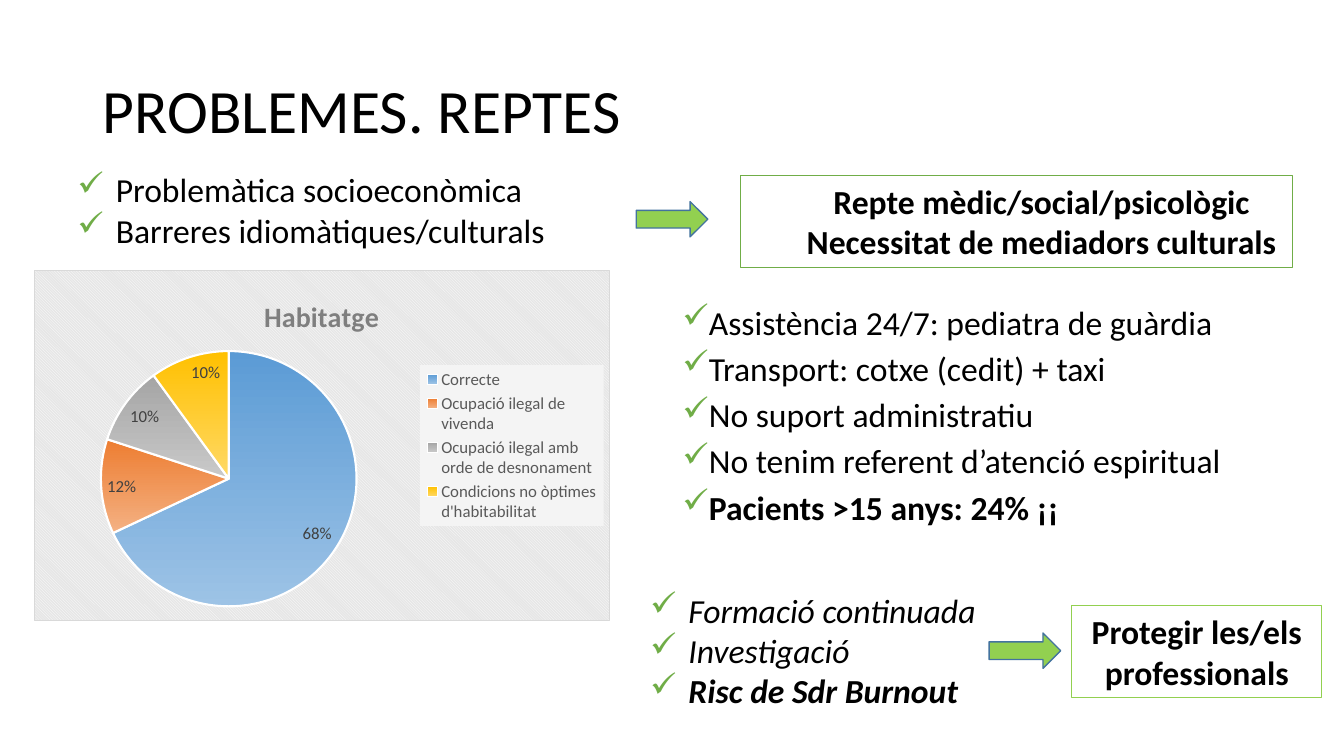
from lxml.etree import SubElement
from pptx import Presentation
from pptx.chart.data import CategoryChartData
from pptx.dml.color import RGBColor
from pptx.enum.chart import XL_CHART_TYPE, XL_LABEL_POSITION, XL_LEGEND_POSITION
from pptx.enum.shapes import MSO_SHAPE
from pptx.enum.text import MSO_ANCHOR, PP_ALIGN
from pptx.oxml import parse_xml
from pptx.oxml.ns import nsdecls, qn
from pptx.util import Inches, Pt

FONT = "Calibri"
BLACK, GREEN, LIME = "000000", "70AD47", "92D050"


def color(value):
    return RGBColor.from_string(value)


def style_font(font, size, value=BLACK, bold=None, italic=None):
    font.name, font.size = FONT, Pt(size)
    font.bold, font.italic = bold, italic
    font.color.rgb = color(value)


def add_title(slide, box, text):
    title = slide.shapes.title
    title.left, title.top, title.width, title.height = map(Inches, box)
    title.text_frame.vertical_anchor = MSO_ANCHOR.MIDDLE
    paragraph = title.text_frame.paragraphs[0]
    paragraph.alignment = PP_ALIGN.LEFT
    paragraph.line_spacing = 0.9
    run = paragraph.add_run()
    run.text = text
    style_font(run.font, 44)


def fill_paragraphs(frame, lines, **font_options):
    """Write one run per paragraph and yield each paragraph."""
    frame.word_wrap = True
    for index, line in enumerate(lines):
        paragraph = frame.add_paragraph() if index else frame.paragraphs[0]
        run = paragraph.add_run()
        run.text = line
        style_font(run.font, 24, **font_options)
        yield paragraph


def add_check_list(slide, box, lines, indent=0.38, italic=None,
                   bold_last=False, line_spacing=None, space_before=0):
    frame = slide.shapes.add_textbox(*map(Inches, box)).text_frame
    for index, paragraph in enumerate(fill_paragraphs(frame, lines, italic=italic)):
        properties = paragraph._p.get_or_add_pPr()
        properties.set("marL", str(Inches(indent)))
        properties.set("indent", str(-Inches(indent)))
        bullet_color = SubElement(properties, qn("a:buClr"))
        SubElement(bullet_color, qn("a:srgbClr"), val=GREEN)
        SubElement(properties, qn("a:buChar"), char="✓")
        if line_spacing:
            paragraph.line_spacing = line_spacing
        if index:
            paragraph.space_before = Pt(space_before)
    if bold_last:
        paragraph.runs[0].font.bold = True


def add_framed_text(slide, box, lines, line_color, indent=0):
    shape = slide.shapes.add_shape(MSO_SHAPE.RECTANGLE, *map(Inches, box))
    shape.shadow.inherit = False
    shape.fill.background()
    shape.line.color.rgb = color(line_color)
    shape.line.width = Pt(0.75)
    for paragraph in fill_paragraphs(shape.text_frame, lines, bold=True):
        paragraph.alignment = PP_ALIGN.CENTER
        paragraph._p.get_or_add_pPr().set("marL", str(Inches(indent)))


def add_arrow(slide, left, top):
    arrow = slide.shapes.add_shape(MSO_SHAPE.RIGHT_ARROW, Inches(left), Inches(top),
                                   Inches(0.71), Inches(0.35))
    arrow.shadow.inherit = False
    arrow.fill.solid()
    arrow.fill.fore_color.rgb = color(LIME)
    arrow.line.color.rgb = color("43739E")
    arrow.line.width = Pt(1)


def place(element, position, **fractions):
    """Set a manual layout, in fractions of the chart, as child number position."""
    for old_layout in element.findall(qn("c:layout")):
        element.remove(old_layout)
    inner = '<c:layoutTarget val="inner"/>' if element.tag == qn("c:plotArea") else ""
    modes = '<c:xMode val="edge"/><c:yMode val="edge"/>'
    values = "".join(f'<c:{name} val="{value}"/>' for name, value in fractions.items())
    element.insert(position, parse_xml(
        f'<c:layout {nsdecls("c")}><c:manualLayout>{inner}{modes}{values}'
        '</c:manualLayout></c:layout>'))


def fill_chart_area(chart):
    chart._chartSpace.find(qn("c:chart")).addnext(parse_xml(
        f'<c:spPr {nsdecls("c", "a")}><a:pattFill prst="dkDnDiag">'
        '<a:fgClr><a:srgbClr val="FFFFFF"/></a:fgClr>'
        '<a:bgClr><a:srgbClr val="E6E6E6"/></a:bgClr></a:pattFill>'
        '<a:ln w="9525"><a:solidFill><a:srgbClr val="D9D9D9"/></a:solidFill></a:ln>'
        '</c:spPr>'))


def add_housing_chart(slide, box):
    slices = [
        ("Correcte", 68, "5B9BD5", "9DC3E6"),
        ("Ocupació ilegal de vivenda", 12, "ED7D31", "F4B183"),
        ("Ocupació ilegal amb orde de desnonament", 10, "A5A5A5", "C9C9C9"),
        ("Condicions no òptimes d'habitabilitat", 10, "FFC000", "FFD966"),
    ]
    data = CategoryChartData()
    data.categories = [name for name, *_ in slices]
    data.add_series("Series 1", [value for _, value, *_ in slices])
    chart = slide.shapes.add_chart(XL_CHART_TYPE.PIE, *map(Inches, box), data).chart
    style_font(chart.font, 10)
    fill_chart_area(chart)

    chart.has_title = True
    run = chart.chart_title.text_frame.paragraphs[0].add_run()
    run.text = "Habitatge"
    style_font(run.font, 20, "7F7F7F", bold=True)
    place(chart.chart_title._element, 1, x=0.39, y=0.06)

    plot = chart.plots[0]
    plot.vary_by_categories = True
    place(chart._chartSpace.chart.plotArea, 0, x=0.115, y=0.23, w=0.445, h=0.73)
    for index, (_, _, *shades) in enumerate(slices):
        point_format = plot.series[0].points[index].format
        point_format.fill.gradient()
        point_format.fill.gradient_angle = 270
        for stop, shade in zip(point_format.fill.gradient_stops, shades):
            stop.color.rgb = color(shade)
        point_format.line.color.rgb = color("FFFFFF")
        point_format.line.width = Pt(1.5)

    plot.has_data_labels = True
    labels = plot.data_labels
    labels.show_percentage, labels.show_value = True, False
    labels.number_format, labels.number_format_is_linked = "0%", False
    labels.position = XL_LABEL_POSITION.INSIDE_END
    style_font(labels.font, 12, "404040")

    chart.has_legend = True
    legend = chart.legend
    legend.position = XL_LEGEND_POSITION.RIGHT
    legend.include_in_layout = False
    style_font(legend.font, 12, "595959")
    place(legend._element, 1, x=0.67, y=0.27, w=0.32, h=0.46)
    legend._element.find(qn("c:txPr")).addprevious(parse_xml(
        f'<c:spPr {nsdecls("c", "a")}><a:solidFill><a:srgbClr val="F4F4F4"/>'
        '</a:solidFill></c:spPr>'))


def main():
    presentation = Presentation()
    presentation.slide_width, presentation.slide_height = Inches(13.33), Inches(7.5)
    slide = presentation.slides.add_slide(presentation.slide_layouts[5])

    add_title(slide, (0.92, 0.4, 11.5, 1.45), "PROBLEMES. REPTES")
    add_check_list(slide, (6.67, 3.02, 6.44, 2.29), [
        "Assistència 24/7: pediatra de guàrdia",
        "Transport: cotxe (cedit) + taxi",
        "No suport administratiu",
        "No tenim referent d’atenció espiritual",
        "Pacients >15 anys: 24% ¡¡",
    ], indent=0.25, bold_last=True, line_spacing=0.8, space_before=10)
    add_housing_chart(slide, (0.34, 2.68, 5.71, 3.48))
    add_check_list(slide, (6.35, 5.8, 4.51, 1.31),
                   ["Formació continuada", "Investigació", "Risc de Sdr Burnout"],
                   italic=True, bold_last=True)
    add_check_list(slide, (0.67, 1.63, 6.67, 0.91),
                   ["Problemàtica socioeconòmica", "Barreres idiomàtiques/culturals"])
    add_framed_text(slide, (7.34, 1.74, 5.48, 0.91),
                    ["Repte mèdic/social/psicològic", "Necessitat de mediadors culturals"],
                    GREEN, indent=0.5)
    add_arrow(slide, 6.31, 2)
    add_framed_text(slide, (10.63, 6.01, 2.48, 0.91), ["Protegir les/els professionals"], LIME)
    add_arrow(slide, 9.81, 6.28)
    presentation.save("out.pptx")


if __name__ == "__main__":
    main()
